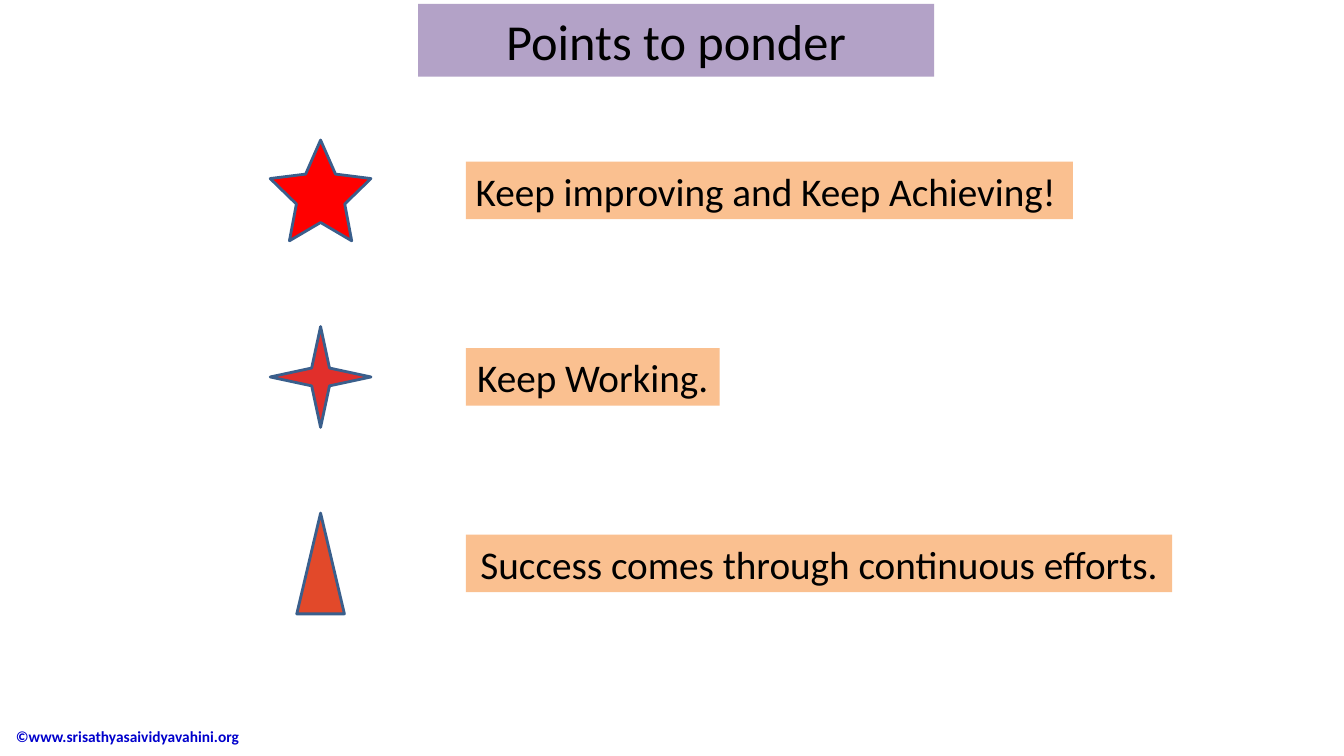
from dataclasses import dataclass

from pptx import Presentation
from pptx.dml.color import RGBColor
from pptx.enum.shapes import MSO_SHAPE
from pptx.enum.text import MSO_ANCHOR, MSO_AUTO_SIZE, PP_ALIGN
from pptx.util import Cm, Pt

STAR, SPARK, TRIANGLE = (
    MSO_SHAPE.STAR_5_POINT, MSO_SHAPE.STAR_4_POINT, MSO_SHAPE.ISOSCELES_TRIANGLE)
LEFT, CENTER = PP_ALIGN.LEFT, PP_ALIGN.CENTER
MIDDLE = MSO_ANCHOR.MIDDLE
TITLE_ONLY = 5


@dataclass(frozen=True)
class Theme:
    font: str = "Calibri"
    text: str = "000000"
    footer: str = "0000CC"
    banner: str = "B3A2C7"
    label: str = "FAC090"
    outline: str = "3A5F8C"
    title_size: int = 36
    label_size: int = 28
    footer_size: int = 11


theme = Theme()


def paint(shape, color):
    shape.fill.solid()
    shape.fill.fore_color.rgb = RGBColor.from_string(color)


def write(shape, text, size, color, align, bold=False):
    frame = shape.text_frame
    frame.auto_size = MSO_AUTO_SIZE.NONE
    frame.vertical_anchor = MIDDLE
    para = frame.paragraphs[0]
    para.alignment = align
    span = para.add_run()
    span.text = text
    span.font.name = theme.font
    span.font.size = Pt(size)
    span.font.bold = bold
    span.font.color.rgb = RGBColor.from_string(color)


deck = Presentation()
deck.slide_width, deck.slide_height = Cm(33.87), Cm(19.05)
page = deck.slides.add_slide(deck.slide_layouts[TITLE_ONLY])

# Title banner
title = page.shapes.title
title.left, title.top, title.width, title.height = Cm(10.54), Cm(0.1), Cm(13), Cm(1.83)
paint(title, theme.banner)
write(title, "Points to ponder", theme.title_size, theme.text, CENTER)

# Rows: an icon beside its label, both centred on the row
icon_center, icon_height = 8.08, 2.54
label_left, label_height = 11.74, 1.45
first_row, row_pitch = 4.8, 4.7
rows = [
    (STAR, 2.54, "FF0000", "Keep improving and Keep Achieving!", 15.3, LEFT),
    (SPARK, 2.54, "E12F2B", "Keep Working.", 6.4, CENTER),
    (TRIANGLE, 1.2, "E2492A", "Success comes through continuous efforts.", 17.8, CENTER),
]
for index, (kind, icon_width, color, text, label_width, align) in enumerate(rows):
    middle = first_row + index * row_pitch

    icon = page.shapes.add_shape(
        kind, Cm(icon_center - icon_width / 2), Cm(middle - icon_height / 2),
        Cm(icon_width), Cm(icon_height))
    icon.shadow.inherit = False
    paint(icon, color)
    icon.line.color.rgb = RGBColor.from_string(theme.outline)
    icon.line.width = Pt(2)
    if kind == STAR:
        icon.adjustments[0] = 0.24

    label = page.shapes.add_textbox(
        Cm(label_left), Cm(middle - label_height / 2), Cm(label_width), Cm(label_height))
    paint(label, theme.label)
    label.text_frame.word_wrap = False
    write(label, text, theme.label_size, theme.text, align)

# Copyright line
footer = page.shapes.add_textbox(Cm(0.15), Cm(18.03), Cm(9), Cm(1.04))
footer.text_frame.word_wrap = True
write(footer, "©www.srisathyasaividyavahini.org", theme.footer_size, theme.footer, LEFT, bold=True)

deck.save("out.pptx")
